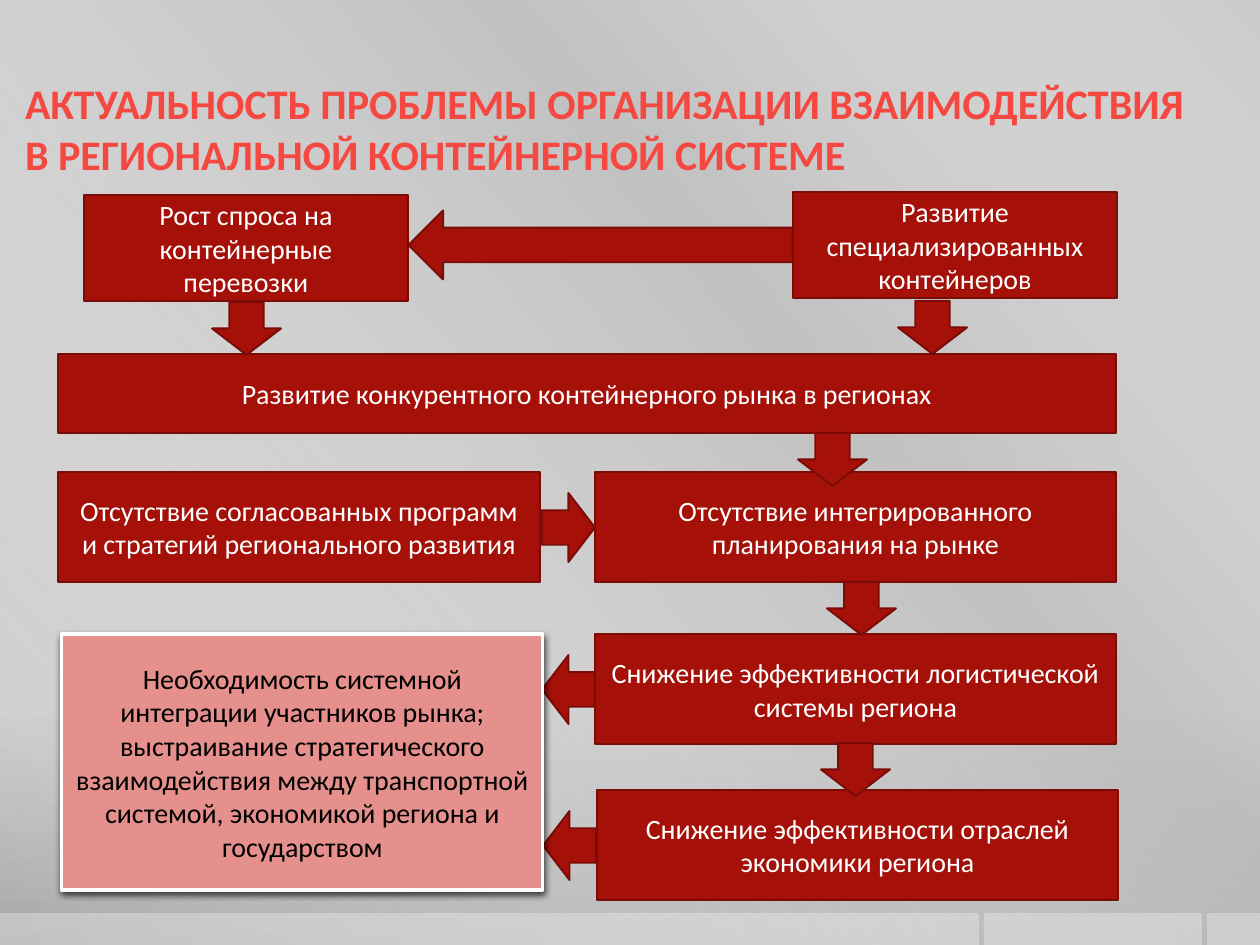
"""Build the slide on interaction problems in a regional container system."""
from dataclasses import dataclass

from lxml import etree
from pptx import Presentation
from pptx.dml.color import RGBColor
from pptx.enum import shapes, text
from pptx.oxml import ns
from pptx.util import Emu, Pt

PX = 914400 / 126
FONT = "Calibri"
CORAL = RGBColor(0xF5, 0x48, 0x40)
RED = RGBColor(0xA5, 0x10, 0x09)
DARK_RED = RGBColor(0x7A, 0x0C, 0x07)
PINK = RGBColor(0xE5, 0x90, 0x8C)
WHITE = RGBColor(0xFF, 0xFF, 0xFF)
BLACK = RGBColor(0, 0, 0)
LIGHT_GRAY = RGBColor(0xCB, 0xCB, 0xCB)
PALE_GRAY = RGBColor(0xC8, 0xC8, 0xC8)
MID_GRAY = RGBColor(0xBF, 0xBF, 0xBF)
DEEP_GRAY = RGBColor(0xA7, 0xA7, 0xA7)


@dataclass(frozen=True)
class Box:
    left: int
    top: int
    width: int
    height: int
    label: str
    fill: RGBColor = RED
    line: RGBColor = DARK_RED
    line_width: float = 1.1
    color: RGBColor = WHITE


@dataclass(frozen=True)
class Arrow:
    left: int
    top: int
    turn: int = 0
    length: int = 53


BOXES = [
    Box(58, 354, 1058, 79, "Развитие конкурентного контейнерного рынка в регионах"),
    Box(84, 195, 324, 106, "Рост спроса на контейнерные перевозки"),
    Box(793, 192, 324, 106, "Развитие специализированных контейнеров"),
    Box(595, 472, 521, 110, "Отсутствие интегрированного планирования на рынке"),
    Box(58, 472, 482, 110,
        "Отсутствие согласованных программ и стратегий регионального развития"),
    Box(595, 634, 521, 110, "Снижение эффективности логистической системы региона"),
    Box(597, 790, 521, 110, "Снижение эффективности отраслей экономики региона"),
]
CONCLUSION = Box(
    62, 634, 481, 256,
    "Необходимость системной интеграции участников рынка; выстраивание "
    "стратегического взаимодействия между транспортной системой, "
    "экономикой региона и государством", PINK, WHITE, 1.75, BLACK)
ARROWS = [
    Arrow(212, 302), Arrow(898, 301), Arrow(798, 433), Arrow(827, 582),
    Arrow(821, 743), Arrow(534, 501, 270), Arrow(534, 663, 90),
    Arrow(535, 819, 90), Arrow(566, 53, 90, 384),
]


def px(*lengths: int) -> list[Emu]:
    """Turn pixel lengths into EMU."""
    return [Emu(round(length * PX)) for length in lengths]


def add_color(parent, color: RGBColor, alpha: int) -> None:
    """Append a colour with an opacity in percent."""
    value = etree.SubElement(parent, ns.qn("a:srgbClr"), val=str(color))
    etree.SubElement(value, ns.qn("a:alpha"), val=str(alpha * 1000))


def set_gradient(solid, stops: list[tuple[int, RGBColor, int]], angle: int) -> None:
    """Replace a solid fill element with a linear gradient."""
    gradient = etree.Element(ns.qn("a:gradFill"), rotWithShape="1")
    stop_list = etree.SubElement(gradient, ns.qn("a:gsLst"))
    for place, color, alpha in stops:
        stop = etree.SubElement(stop_list, ns.qn("a:gs"), pos=str(place * 1000))
        add_color(stop, color, alpha)
    etree.SubElement(gradient, ns.qn("a:lin"), ang=str(angle * 60000), scaled="0")
    solid.getparent().replace(solid, gradient)


def write(frame, wording: str, *, size: int, color: RGBColor, bold: bool = False,
          align=text.PP_ALIGN.CENTER) -> None:
    """Fill a text frame with one formatted paragraph."""
    frame.word_wrap = True
    frame.auto_size = text.MSO_AUTO_SIZE.NONE
    frame.vertical_anchor = text.MSO_ANCHOR.MIDDLE
    paragraph = frame.paragraphs[0]
    paragraph.text = wording
    paragraph.alignment = align
    for run in paragraph.runs:
        run.font.name = FONT
        run.font.size = Pt(size)
        run.font.bold = bold
        run.font.color.rgb = color


def draw_shape(slide, kind, bounds: tuple[int, int, int, int], fill: RGBColor,
               line: RGBColor | None = None, line_width: float = 1.1):
    """Draw a flat preset shape."""
    shape = slide.shapes.add_shape(kind, *px(*bounds))
    shape.shadow.inherit = False
    shape.fill.solid()
    shape.fill.fore_color.rgb = fill
    if line is None:
        shape.line.fill.background()
    else:
        shape.line.color.rgb = line
        shape.line.width = Pt(line_width)
    return shape


def draw_box(slide, box: Box):
    """Draw a labelled box."""
    shape = draw_shape(slide, shapes.MSO_SHAPE.RECTANGLE,
                       (box.left, box.top, box.width, box.height),
                       box.fill, box.line, box.line_width)
    write(shape.text_frame, box.label, size=16, color=box.color)
    return shape


def draw_arrow(slide, arrow: Arrow) -> None:
    """Draw a down arrow turned to its direction."""
    shape = draw_shape(slide, shapes.MSO_SHAPE.DOWN_ARROW,
                       (arrow.left, arrow.top, 69, arrow.length), RED, DARK_RED)
    shape.rotation = arrow.turn


def add_shadow(shape) -> None:
    """Cast a soft shadow below a shape."""
    effects = shape._element.spPr.find(ns.qn("a:effectLst"))
    shadow = etree.SubElement(
        effects, ns.qn("a:outerShdw"), blurRad=str(Pt(4)), dist=str(Pt(2)),
        dir="5400000", algn="ctr", rotWithShape="0")
    add_color(shadow, BLACK, 70)


def draw_backdrop(slide) -> None:
    """Draw the gray gradients and the strip along the bottom."""
    slide.background.fill.solid()
    solid = slide._element.cSld.find(".//" + ns.qn("a:solidFill"))
    set_gradient(solid, [(0, LIGHT_GRAY, 100), (76, PALE_GRAY, 100),
                         (100, DEEP_GRAY, 100)], 90)
    rectangle = shapes.MSO_SHAPE.RECTANGLE
    sheen = draw_shape(slide, rectangle, (0, 0, 1260, 945), WHITE)
    set_gradient(sheen._element.spPr.find(ns.qn("a:solidFill")),
                 [(0, WHITE, 0), (34, MID_GRAY, 61), (38, MID_GRAY, 76),
                  (100, WHITE, 0)], 140)
    for left, right in ((1207, 1260), (984, 1202), (0, 979)):
        strip = draw_shape(slide, rectangle, (left, 913, right - left, 32), WHITE)
        solid = strip._element.spPr.find(ns.qn("a:solidFill"))
        solid.clear()
        add_color(solid, WHITE, 30)


def draw_title(slide) -> None:
    """Place the title above the backdrop."""
    title = slide.shapes.title
    slide.shapes._spTree.append(title._element)
    title.left, title.top, title.width, title.height = px(25, 65, 1221, 126)
    title.text_frame.margin_left = title.text_frame.margin_right = 0
    write(title.text_frame,
          "АКТУАЛЬНОСТЬ ПРОБЛЕМЫ ОРГАНИЗАЦИИ ВЗАИМОДЕЙСТВИЯ\n"
          "В РЕГИОНАЛЬНОЙ КОНТЕЙНЕРНОЙ СИСТЕМЕ",
          size=24, color=CORAL, bold=True, align=text.PP_ALIGN.LEFT)


def main() -> None:
    """Build and save the presentation."""
    deck = Presentation()
    deck.slide_width, deck.slide_height = px(1260, 945)
    slide = deck.slides.add_slide(deck.slide_layouts[5])
    draw_backdrop(slide)
    draw_title(slide)
    for box in BOXES:
        draw_box(slide, box)
    for arrow in ARROWS:
        draw_arrow(slide, arrow)
    add_shadow(draw_box(slide, CONCLUSION))
    deck.save("out.pptx")


if __name__ == "__main__":
    main()
